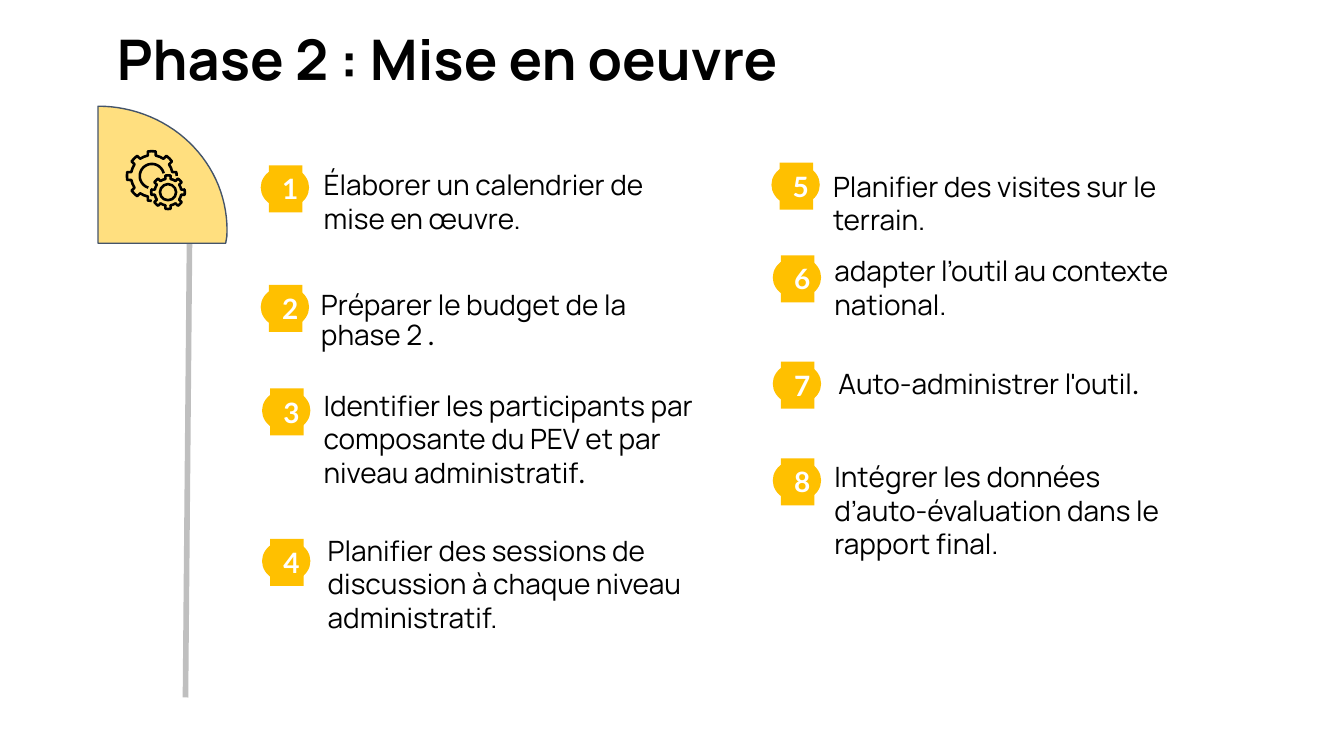
"""Builds the "Phase 2 : Mise en oeuvre" slide with eight numbered steps."""
from math import cos, radians, sin

from lxml import etree
from pptx import Presentation
from pptx import util as u
from pptx.dml import color
from pptx.enum import shapes, text
from pptx.oxml import ns

GOLD, BLACK, WHITE = "FFC000", "000000", "FFFFFF"
BODY = {"name": "Manrope", "size": u.Pt(15), "bold": False}
DOT = {**BODY, "name": "Lato"}
BADGE = {**DOT, "bold": True}
HEAD = {**BODY, "size": u.Pt(30), "bold": True}


def paint(part, hue, alpha=None):
    """Gives a fill or a line a solid colour, see-through if alpha is set."""
    part.solid()
    part.fore_color.rgb = color.RGBColor.from_string(hue)
    if alpha:
        node = part._xPr.find(".//" + ns.qn("a:srgbClr"))
        etree.SubElement(node, ns.qn("a:alpha"), val=str(alpha * 1000))


def write(para, words, form, hue):
    """Adds one formatted run to a paragraph."""
    run = para.add_run()
    run.text = words
    for key, val in form.items():
        setattr(run.font, key, val)
    run.font.color.rgb = color.RGBColor.from_string(hue)


deck = Presentation()
deck.slide_width = u.Inches(10)
deck.slide_height = u.Inches(10) * 9 // 16
slide = deck.slides.add_slide(deck.slide_layouts[5])
items = slide.shapes

title = items.title
spot = {"left": 0.77, "top": 0.19, "width": 9.01, "height": 0.61}
for key, val in spot.items():
    setattr(title, key, u.Inches(val))
title.text_frame.auto_size = text.MSO_AUTO_SIZE.NONE
title.text_frame.vertical_anchor = text.MSO_ANCHOR.TOP
para = title.text_frame.paragraphs[0]
para.alignment, para.line_spacing = text.PP_ALIGN.LEFT, 0.9
write(para, "Phase 2 : Mise en oeuvre", HEAD, BLACK)

ends = [u.Inches(n) for n in (1.41, 1.81, 1.38, 5.19)]
stem = items.add_connector(shapes.MSO_CONNECTOR.STRAIGHT, *ends)
stem.line.width = u.Pt(3)
paint(stem.line.fill, "808080", 50)
etree.SubElement(stem._element.spPr, ns.qn("a:effectLst"))

wedge = [(0.73 + 0.96 * cos(radians(a)), 1.71 + 0.92 * sin(radians(a)))
         for a in range(-90, 6, 3)] + [(1.68, 1.81), (0.73, 1.81)]
tooth = [(-11, 0), (-9, 1), (0, 1), (9, 1), (11, 0), (22.5, 0)]
gears = []
for x, y, root, tip, first, last in [(1.13, 1.31, 0.155, 0.185, 90, 360),
                                     (1.25, 1.43, 0.1, 0.125, -11, 340)]:
    turns = [(45 * k + a, tip if high else root)
             for k in range(9) for a, high in tooth]
    gears.append([(x + r * cos(radians(a)), y + r * sin(radians(a)))
                  for a, r in turns if first <= a <= last])
arc = [(1.13 + 0.09 * cos(radians(a)), 1.31 + 0.09 * sin(radians(a)))
       for a in range(107, 348, 8)]

for dots, shut, fill, line, size in [
        (wedge, True, GOLD, "44546A", 0.75),
        (gears[0], False, None, BLACK, 1.4),
        (arc, False, None, BLACK, 1.4),
        (gears[1], True, None, BLACK, 1.4)]:
    dots = [(u.Inches(x), u.Inches(y)) for x, y in dots]
    pen = items.build_freeform(*dots[0])
    pen.add_line_segments(dots[1:], close=shut)
    form = pen.convert_to_shape()
    form.shadow.inherit = False
    if fill:
        paint(form.fill, fill, 50)
    else:
        form.fill.background()
    paint(form.line.fill, line)
    form.line.width = u.Pt(size)

hub = items.add_shape(shapes.MSO_SHAPE.OVAL, u.Inches(1.19), u.Inches(1.37),
                      u.Inches(0.12), u.Inches(0.12))
hub.shadow.inherit = False
hub.fill.background()
paint(hub.line.fill, BLACK)
hub.line.width = u.Pt(1.4)

steps = [
    (1.94, 1.23, 2.31, 1.2, 2.8, 0.61, "Élaborer un calendrier de mise en œuvre.", ""),
    (1.94, 2.12, 2.29, 2.12, 2.8, 0.56, "Préparer le budget de la phase 2 ", "."),
    (1.95, 2.89, 2.31, 2.84, 2.97, 0.86,
     "Identifier les participants par composante du PEV et par niveau administratif", "."),
    (1.95, 4.01, 2.34, 3.92, 2.86, 0.86,
     "Planifier des sessions de discussion à chaque niveau administratif.", ""),
    (5.74, 1.21, 6.1, 1.21, 2.8, 0.61, "Planifier des visites sur le terrain.", ""),
    (5.75, 1.9, 6.11, 1.84, 2.8, 0.61, "adapter l’outil au contexte national.", ""),
    (5.75, 2.69, 6.14, 2.68, 2.86, 0.35, "Auto-administrer l'outil", "."),
    (5.75, 3.41, 6.11, 3.37, 2.86, 0.86,
     "Intégrer les données d’auto-évaluation dans le rapport final.", ""),
]
for num, (x, y, left, top, wide, high, words, dot) in enumerate(steps, 1):
    for kind, *area in [(shapes.MSO_SHAPE.OVAL, x, y + 0.01, 0.36, 0.31),
                        (shapes.MSO_SHAPE.RECTANGLE, x + 0.06, y, 0.25, 0.35)]:
        badge = items.add_shape(kind, *[u.Inches(n) for n in area])
        badge.shadow.inherit = False
        paint(badge.fill, GOLD)
        badge.line.fill.background()
    label = items.add_textbox(*[u.Inches(n) for n in (left, top, wide, high)])
    for frame in (badge.text_frame, label.text_frame):
        frame.word_wrap = True
        frame.auto_size = text.MSO_AUTO_SIZE.SHAPE_TO_FIT_TEXT
        frame.vertical_anchor = text.MSO_ANCHOR.TOP
    para = badge.text_frame.paragraphs[0]
    para.alignment = text.PP_ALIGN.CENTER
    write(para, str(num), BADGE, WHITE)
    para = label.text_frame.paragraphs[0]
    if num == 2:
        para.line_spacing = 0.9
    write(para, words, BODY, BLACK)
    if dot:
        write(para, dot, DOT, BLACK)

deck.save("out.pptx")
